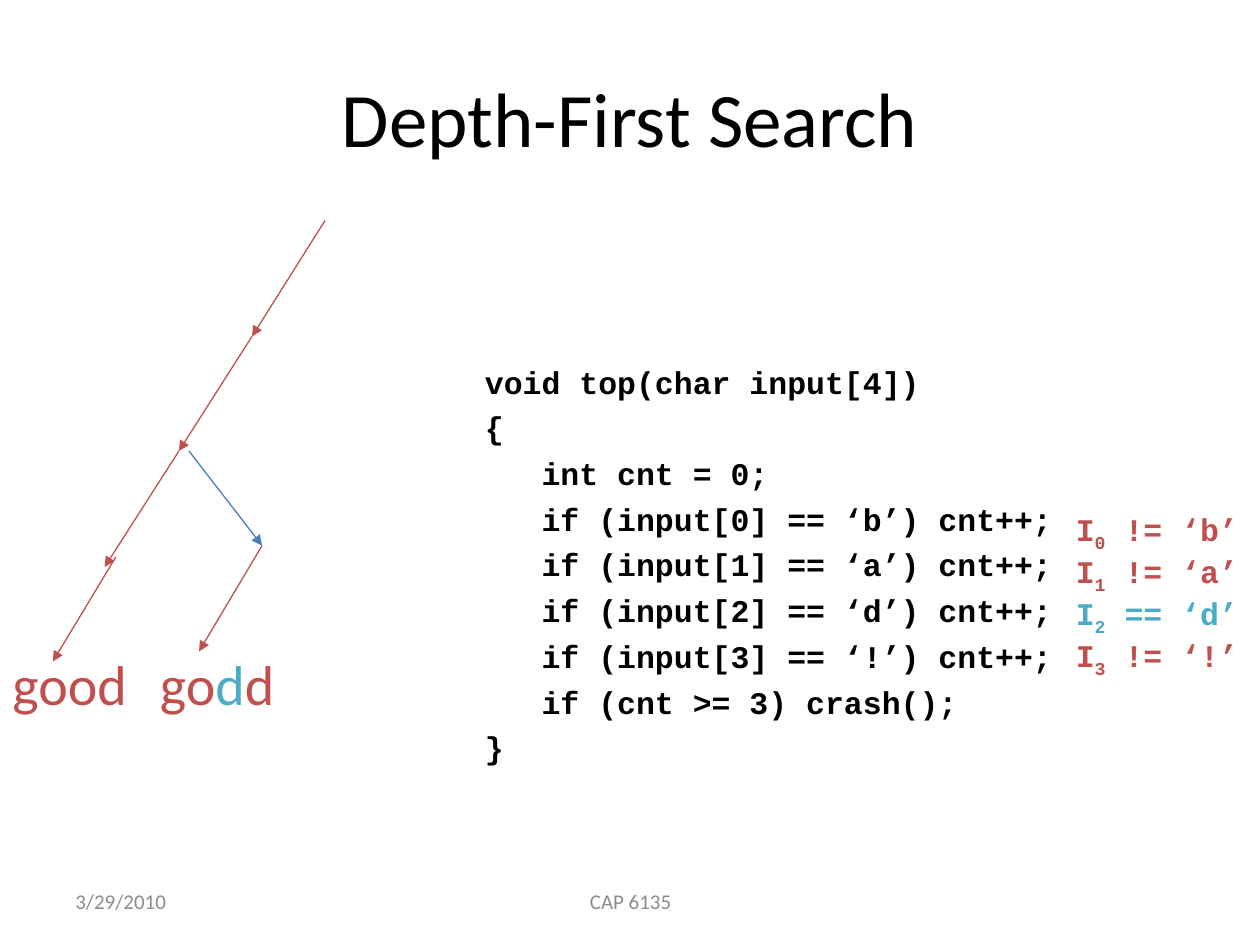
from lxml import etree
from pptx import Presentation
from pptx.dml.color import RGBColor
from pptx.enum.shapes import MSO_CONNECTOR
from pptx.enum.text import MSO_ANCHOR, PP_ALIGN
from pptx.oxml.ns import qn
from pptx.util import Inches, Pt

LEFT, CENTER = PP_ALIGN.LEFT, PP_ALIGN.CENTER
TOP, MIDDLE = MSO_ANCHOR.TOP, MSO_ANCHOR.MIDDLE
STRAIGHT = MSO_CONNECTOR.STRAIGHT

BLACK = RGBColor(0x00, 0x00, 0x00)
RED = RGBColor(0xC0, 0x50, 0x4D)
BLUE = RGBColor(0x4A, 0x7E, 0xBB)
TEAL = RGBColor(0x4B, 0xAC, 0xC6)
GRAY = RGBColor(0x8C, 0x8C, 0x8C)


def add_text(box, lines, size, font, bold=False, align=LEFT, anchor=TOP):
    """Add a text box; each line is a list of (text, color) runs."""
    shape = slide.shapes.add_textbox(*(Inches(value) for value in box))
    frame = shape.text_frame
    frame.word_wrap = True
    frame.vertical_anchor = anchor
    for number, line in enumerate(lines):
        paragraph = frame.add_paragraph() if number else frame.paragraphs[0]
        paragraph.alignment = align
        for text, color in line:
            run = paragraph.add_run()
            run.text = text
            run.font.size = Pt(size)
            run.font.name = font
            run.font.bold = bold
            run.font.color.rgb = color
    return frame


def add_arrow(start, end, color):
    points = (Inches(value) for value in (*start, *end))
    connector = slide.shapes.add_connector(STRAIGHT, *points)
    connector.line.color.rgb = color
    connector.line.width = Pt(0.75)
    etree.SubElement(connector.line._get_or_add_ln(), qn("a:tailEnd"), type="triangle")
    etree.SubElement(connector._element.spPr, qn("a:effectLst"))


presentation = Presentation()
presentation.slide_width = Inches(10)
presentation.slide_height = Inches(7.5)
slide = presentation.slides.add_slide(presentation.slide_layouts[6])

add_text((0.5, 0.3, 9, 1.25), [[("Depth-First Search", BLACK)]], 44, "Calibri",
         align=CENTER, anchor=MIDDLE)

# Search tree
branches = [
    ((2.58, 1.75), (2, 2.67), RED),
    ((2, 2.67), (1.42, 3.58), RED),
    ((1.5, 3.58), (2.08, 4.33), BLUE),
    ((2.08, 4.33), (1.58, 5.17), RED),
    ((1.42, 3.58), (0.83, 4.5), RED),
    ((0.92, 4.42), (0.42, 5.25), RED),
]
for start, end, color in branches:
    add_arrow(start, end, color)

leaves = [
    (0, [("good", RED)]),
    (1.17, [("go", RED), ("d", TEAL), ("d", RED)]),
]
for left, word in leaves:
    add_text((left, 5.11, 1.67, 0.64), [word], 32, "Calibri")

# Program, with its body indented by three characters
code = [
    (0, "void top(char input[4])"),
    (0, "{"),
    (0.45, "int cnt = 0;"),
    *((0.45, f"if (input[{index}] == ‘{letter}’) cnt++;")
      for index, letter in enumerate("bad!")),
    (0.45, "if (cnt >= 3) crash();"),
    (0, "}"),
]
code_frame = add_text((3.75, 2.83, 5.67, 1.94), [[(text, BLACK)] for _, text in code],
                      18, "Courier New", bold=True)
for paragraph, (indent, _) in zip(code_frame.paragraphs, code):
    paragraph.space_before = Pt(4.5)
    paragraph._p.get_or_add_pPr().set("marL", str(Inches(indent)))

# Path constraints, one beside each test
constraints = [("!=", "b", RED), ("!=", "a", RED), ("==", "d", TEAL), ("!=", "!", RED)]
for index, (operator, letter, color) in enumerate(constraints):
    runs = [("I", color), (str(index), color), (f" {operator} ‘{letter}’", color)]
    frame = add_text((8.44, 4 + index / 3, 1.56, 0.17), [runs], 18, "Courier New", bold=True)
    paragraph = frame.paragraphs[0]
    paragraph.space_before = Pt(4.5)
    paragraph.runs[1].font._element.set("baseline", "-25000")

# Footer
add_text((0.5, 6.95, 2.33, 0.4), [[("3/29/2010", GRAY)]], 12, "Calibri", anchor=MIDDLE)
add_text((3.42, 6.95, 3.17, 0.4), [[("CAP 6135", GRAY)]], 12, "Calibri",
         align=CENTER, anchor=MIDDLE)

presentation.save("out.pptx")
